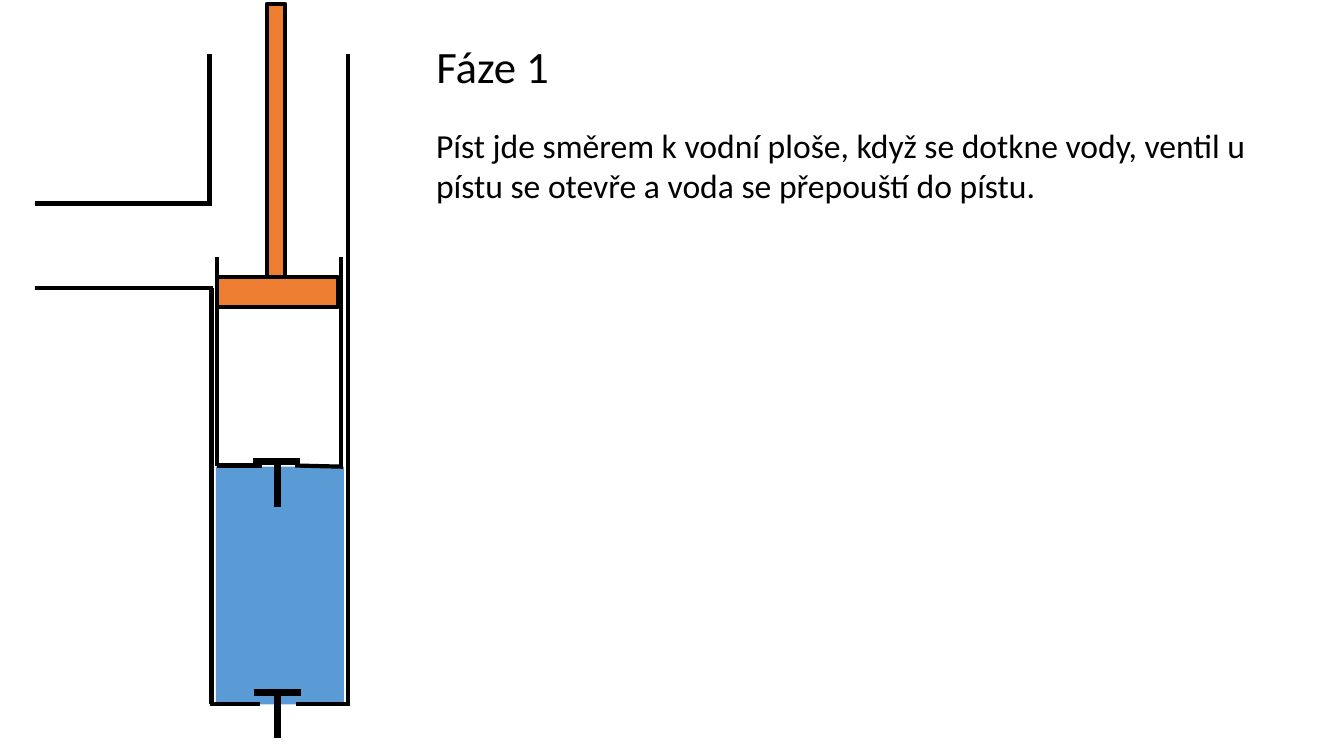
from lxml import etree
from pptx import Presentation
from pptx.dml.color import RGBColor
from pptx.enum.shapes import MSO_CONNECTOR, MSO_SHAPE
from pptx.enum.text import MSO_ANCHOR, MSO_AUTO_SIZE, PP_ALIGN
from pptx.oxml.ns import qn
from pptx.util import Cm, Pt

RECT = MSO_SHAPE.RECTANGLE
STRAIGHT = MSO_CONNECTOR.STRAIGHT
TOP = MSO_ANCHOR.TOP
LEFT = PP_ALIGN.LEFT
NO_FIT = MSO_AUTO_SIZE.NONE
TITLE_ONLY = 5

FONT = "Calibri"
COLORS = {"ink": "000000", "water": "5B9BD5", "piston": "ED7D31"}
WALL, VALVE = 3, 4.5  # line widths in points
VALVE_X = 6.99

# Lines as x1, y1, x2, y2 in centimetres
CASING = [
    (5.33, 7.26, 5.33, 17.73),   # left wall
    (8.76, 1.37, 8.76, 17.73),   # right wall
    (0.89, 5.13, 5.33, 5.13),    # outlet, upper edge
    (0.89, 7.26, 5.38, 7.26),    # outlet, lower edge
    (5.28, 17.73, 6.55, 17.73),  # floor, left of the valve
    (7.47, 17.73, 8.81, 17.73),  # floor, right of the valve
    (5.28, 1.37, 5.28, 5.13),    # left wall above the outlet
]
CYLINDER = [
    (5.46, 6.48, 5.46, 11.73),
    (8.59, 6.48, 8.59, 11.73),
    (5.46, 11.73, 6.6, 11.73),
    (7.44, 11.73, 8.64, 11.76),
]


def rgb(name):
    return RGBColor.from_string(COLORS[name])


def add_line(shapes, x1, y1, x2, y2, width=WALL):
    ln = shapes.add_connector(STRAIGHT, Cm(x1), Cm(y1), Cm(x2), Cm(y2))
    ln.line.color.rgb = rgb("ink")
    ln.line.width = Pt(width)
    etree.SubElement(ln._element.spPr, qn("a:effectLst"))


def add_rect(shapes, x, y, w, h, fill, outlined=True):
    sp = shapes.add_shape(RECT, Cm(x), Cm(y), Cm(w), Cm(h))
    sp.shadow.inherit = False
    sp.fill.solid()
    sp.fill.fore_color.rgb = rgb(fill)
    if outlined:
        sp.line.color.rgb = rgb("ink")
        sp.line.width = Pt(WALL)
    else:
        sp.line.fill.background()


def add_valve(shapes, left, y):
    add_line(shapes, left, y, left + 1.19, y, VALVE)
    add_line(shapes, VALVE_X, y, VALVE_X, y + 1.14, VALVE)


def set_text(sp, text, size):
    tf = sp.text_frame
    tf.word_wrap = True
    tf.auto_size = NO_FIT
    tf.vertical_anchor = TOP
    p = tf.paragraphs[0]
    p.alignment = LEFT
    r = p.add_run()
    r.text = text
    r.font.name = FONT
    r.font.size = Pt(size)
    r.font.color.rgb = rgb("ink")


def main():
    prs = Presentation()
    prs.slide_width, prs.slide_height = Cm(33.87), Cm(19.05)
    s = prs.slides.add_slide(prs.slide_layouts[TITLE_ONLY])

    # Water
    add_rect(s.shapes, 5.44, 11.76, 3.23, 5.99, "water", outlined=False)

    # Pump casing with the bottom valve
    casing = s.shapes.add_group_shape().shapes
    for wall in CASING:
        add_line(casing, *wall)
    add_valve(casing, 6.4, 17.45)

    # Piston with its rod and valve
    piston = s.shapes.add_group_shape().shapes
    for wall in CYLINDER:
        add_line(piston, *wall)
    add_rect(piston, 5.46, 6.99, 3.05, 0.74, "piston")
    add_rect(piston, 6.73, 0.1, 0.46, 6.88, "piston")
    add_valve(piston, 6.38, 11.63)

    # Title and description
    title = s.shapes.title
    title.left, title.top = Cm(10.74), Cm(0.86)
    title.width, title.height = Cm(22.4), Cm(1.63)
    set_text(title, "Fáze 1", 32)
    body = s.shapes.add_textbox(Cm(10.74), Cm(3.02), Cm(22.4), Cm(2.29))
    set_text(body, "Píst jde směrem k vodní ploše, když se dotkne vody, "
                   "ventil u pístu se otevře a voda se přepouští do pístu.", 24)

    prs.save("out.pptx")


if __name__ == "__main__":
    main()
